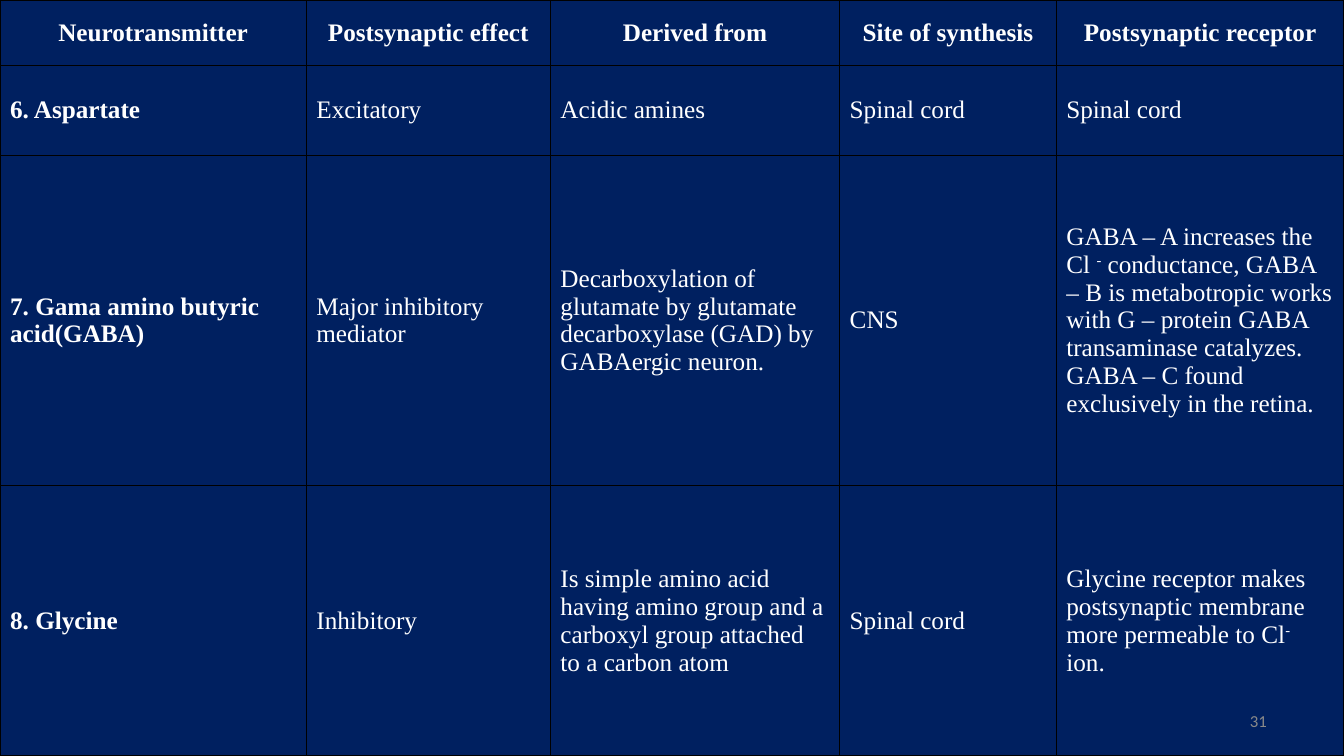
"""Build a slide with a table of neurotransmitters 6 to 8."""
from pptx import Presentation
from pptx.dml.color import RGBColor
from pptx.enum import text as t
from pptx.oxml import parse_xml
from pptx.oxml.ns import nsdecls
from pptx.util import Cm, Pt

HEAD = ["Neurotransmitter", "Postsynaptic effect", "Derived from",
        "Site of synthesis", "Postsynaptic receptor"]
BODY = [
    ["6. Aspartate", "Excitatory", "Acidic amines", "Spinal cord", "Spinal cord"],
    ["7. Gama amino butyric acid(GABA)", "Major inhibitory mediator",
     "Decarboxylation of glutamate by glutamate decarboxylase (GAD) by "
     "GABAergic neuron.", "CNS",
     "GABA – A increases the Cl ^-^ conductance, GABA – B is metabotropic works "
     "with G – protein GABA transaminase catalyzes. GABA – C found exclusively "
     "in the retina."],
    ["8. Glycine", "Inhibitory",
     "Is simple amino acid having amino group and a carboxyl group attached to "
     "a carbon atom", "Spinal cord",
     "Glycine receptor makes postsynaptic membrane more permeable to Cl^-^ ion."],
]
PAGE = "31"
WIDE, HIGH = 33.87, 19.05
COLS = [7.72, 6.15, 7.29, 5.46, 7.25]
ROWS = [1.65, 2.26, 8.33, 6.81]
ROW_LINES = [2, 1, 0.75, 1, 2]
COL_LINES = [2, 1, 1, 1, 1, 1]
NAVY = RGBColor(0x00, 0x20, 0x60)
BLACK = RGBColor(0, 0, 0)
WHITE = RGBColor(255, 255, 255)
GREY = RGBColor(0x89, 0x89, 0x89)


def write(frame, words, size=18, font="Times New Roman", color=WHITE,
          bold=False, align=t.PP_ALIGN.LEFT):
    """Write words in a frame, raising each part set between carets."""
    frame.word_wrap = True
    para = frame.paragraphs[0]
    para.alignment = align
    for i, part in enumerate(words.split("^")):
        run = para.add_run()
        run.text = part
        run.font.size, run.font.name = Pt(size), font
        run.font.bold, run.font.color.rgb = bold, color
        if i % 2:
            run._r.get_or_add_rPr().set("baseline", "30000")


def edge(cell, r, c):
    """Draw the four borders of a cell."""
    props = cell._tc.get_or_add_tcPr()
    sides = {"L": COL_LINES[c], "R": COL_LINES[c + 1],
             "T": ROW_LINES[r], "B": ROW_LINES[r + 1]}
    for side, width in sides.items():
        props.append(parse_xml(
            f'<a:ln{side} {nsdecls("a")} w="{Pt(width)}"><a:solidFill>'
            f'<a:srgbClr val="{BLACK}"/></a:solidFill></a:ln{side}>'))


def main():
    """Make the slide and save it."""
    deck = Presentation()
    deck.slide_width, deck.slide_height = Cm(WIDE), Cm(HIGH)
    slide = deck.slides.add_slide(deck.slide_layouts[6])
    slide.background.fill.solid()
    slide.background.fill.fore_color.rgb = NAVY

    data = [HEAD] + BODY
    table = slide.shapes.add_table(len(ROWS), len(COLS), 0, 0,
                                   Cm(WIDE), Cm(HIGH)).table
    table.first_row = table.horz_banding = False
    for col, width in zip(table.columns, COLS):
        col.width = Cm(width)
    for r, (row, height) in enumerate(zip(table.rows, ROWS)):
        row.height = Cm(height)
        for c, cell in enumerate(row.cells):
            edge(cell, r, c)
            cell.fill.solid()
            cell.fill.fore_color.rgb = NAVY
            cell.vertical_anchor = t.MSO_ANCHOR.MIDDLE
            write(cell.text_frame, data[r][c], bold=r == 0 or c == 0,
                  align=t.PP_ALIGN.LEFT if r else t.PP_ALIGN.CENTER)

    frame = slide.shapes.add_textbox(Cm(24.28), Cm(17.65), Cm(7.9),
                                     Cm(1.02)).text_frame
    frame.vertical_anchor = t.MSO_ANCHOR.MIDDLE
    write(frame, PAGE, size=12, font="Calibri", color=GREY,
          align=t.PP_ALIGN.RIGHT)
    deck.save("out.pptx")


if __name__ == "__main__":
    main()
